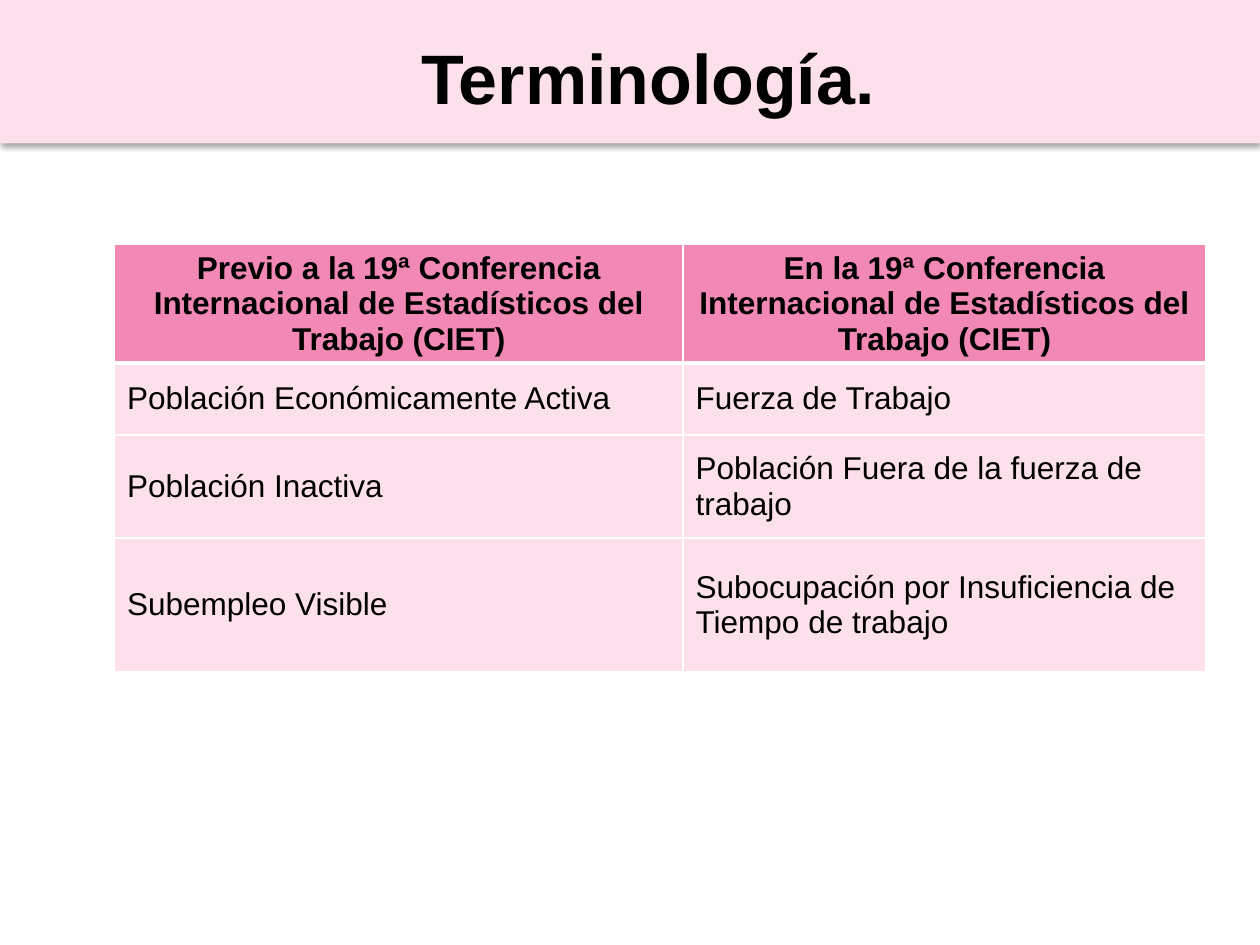
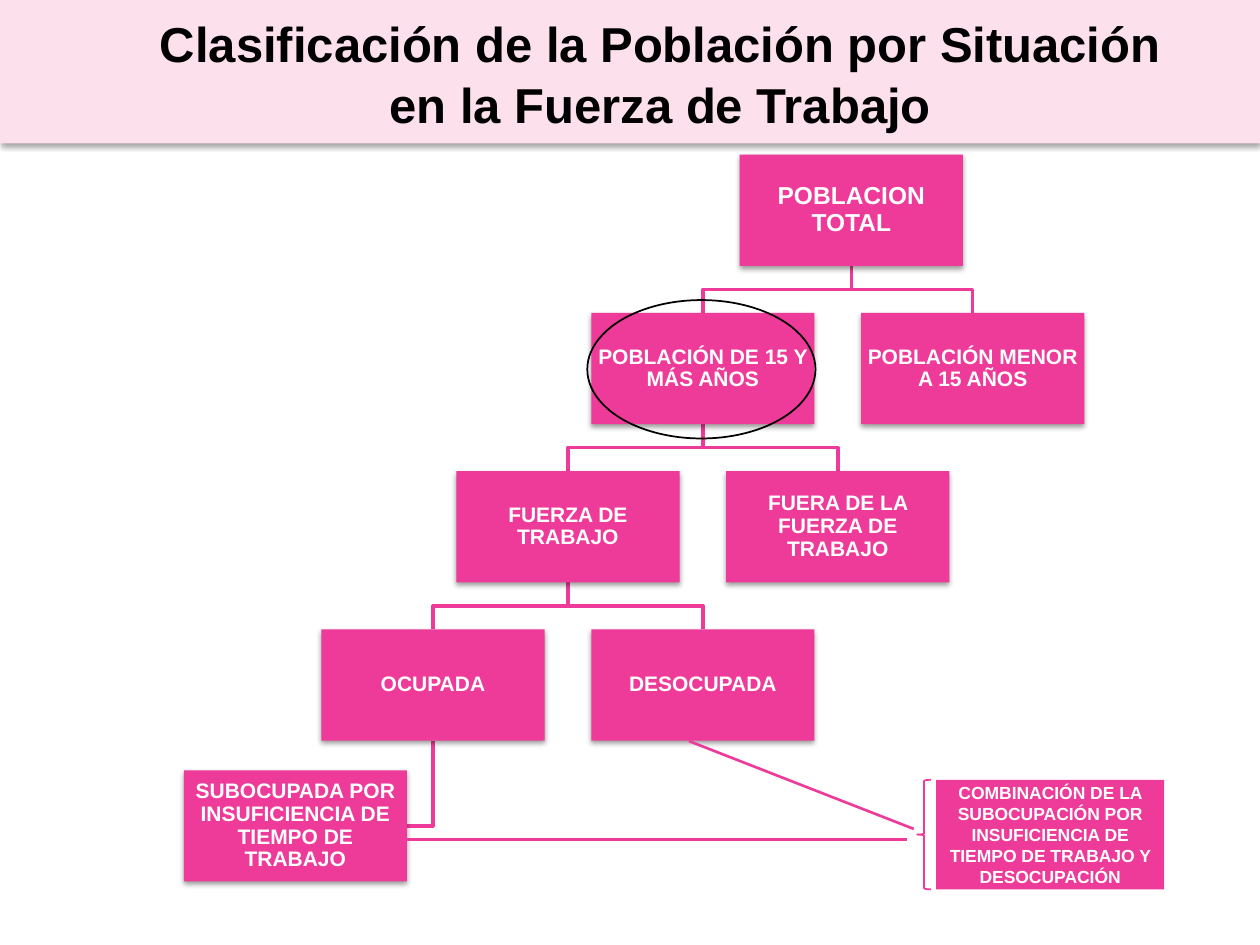
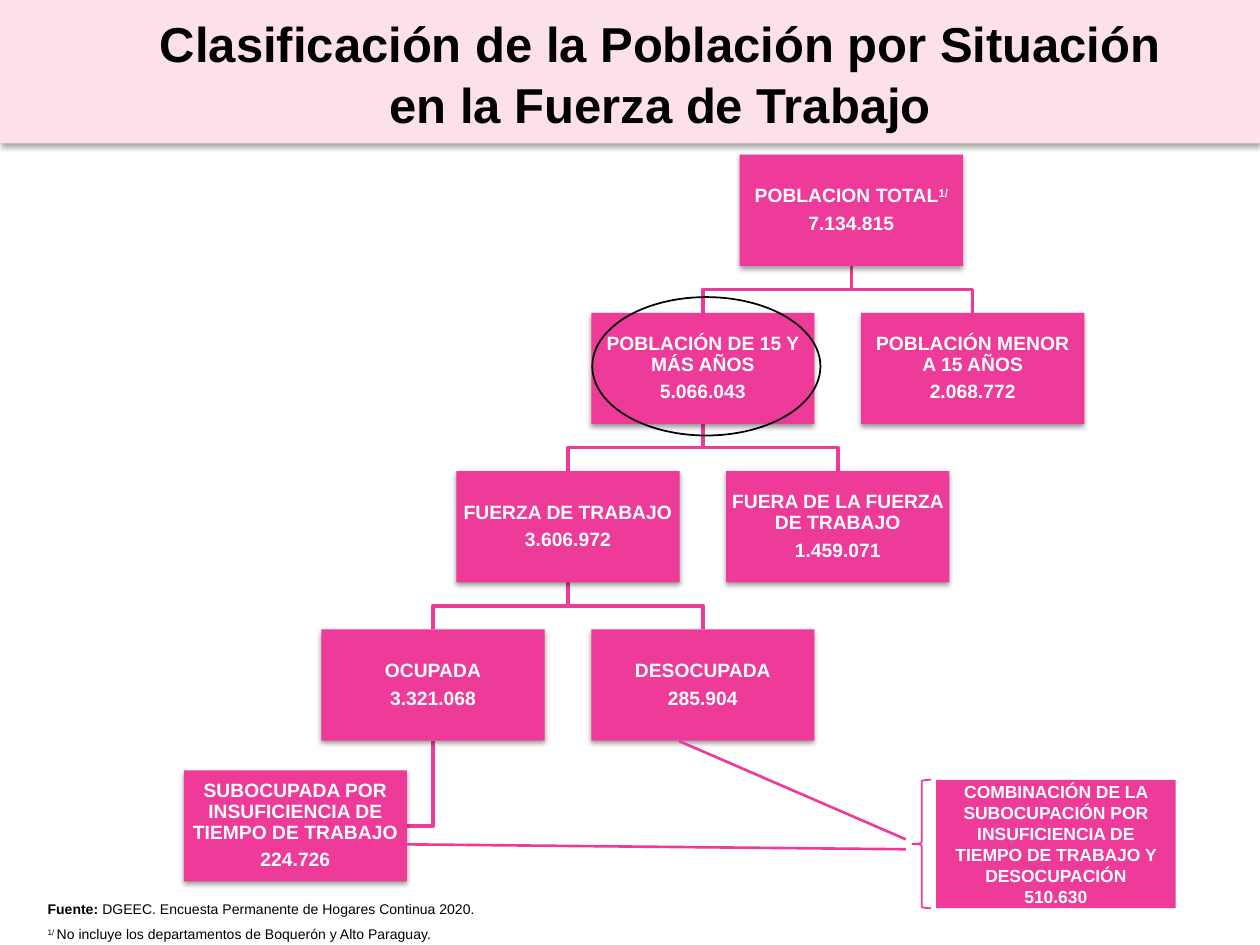
from dataclasses import dataclass

from pptx import Presentation
from pptx.dml.color import RGBColor
from pptx.enum.shapes import MSO_CONNECTOR, MSO_SHAPE
from pptx.enum.text import MSO_ANCHOR, MSO_AUTO_SIZE, PP_ALIGN
from pptx.oxml import parse_xml
from pptx.oxml.ns import nsdecls, qn
from pptx.util import Cm, Pt

RECTANGLE, OVAL, BRACE = MSO_SHAPE.RECTANGLE, MSO_SHAPE.OVAL, MSO_SHAPE.LEFT_BRACE
STRAIGHT = MSO_CONNECTOR.STRAIGHT
CENTER, LEFT = PP_ALIGN.CENTER, PP_ALIGN.LEFT
MIDDLE, TOP = MSO_ANCHOR.MIDDLE, MSO_ANCHOR.TOP
NO_FIT = MSO_AUTO_SIZE.NONE
TITLE_ONLY = 5


@dataclass(frozen=True)
class Theme:
    font: str = "Arial"
    black: RGBColor = RGBColor(0, 0, 0)
    white: RGBColor = RGBColor(255, 255, 255)
    pale: RGBColor = RGBColor(0xFC, 0xE0, 0xEB)
    header: RGBColor = RGBColor(0xF2, 0x88, 0xB4)
    strong: RGBColor = RGBColor(0xEE, 0x3A, 0x98)
    title_size: int = 40
    long_title_size: int = 28
    table_size: int = 18
    root_size: int = 14
    node_size: int = 12
    counted_size: int = 11
    summary_size: int = 10
    note_size: int = 8
    branch_width: float = 2
    joint_width: float = 1.5
    outline_width: float = 1


THEME = Theme()

# Population tree: box size and grid, in centimetres
BOX_WIDTH, BOX_HEIGHT = 4.5, 2.24
TREE_LEFT, TREE_TOP = 6.48, 3.12
COLUMN_STEP, LEVEL_STEP = 2.72, 3.19

# Each node: column, level, label
NODES = {
    "total": (3.1, 0, "POBLACION TOTAL"),
    "adults": (2, 1, "POBLACIÓN DE 15 Y MÁS AÑOS"),
    "minors": (4, 1, "POBLACIÓN MENOR\nA 15 AÑOS"),
    "force": (1, 2, "FUERZA DE TRABAJO"),
    "outside": (3, 2, "FUERA DE LA FUERZA DE TRABAJO"),
    "employed": (0, 3, "OCUPADA"),
    "unemployed": (2, 3, "DESOCUPADA"),
    "underemployed": (-1.02, 3.89, "SUBOCUPADA POR INSUFICIENCIA DE TIEMPO DE TRABAJO"),
}
BRANCHES = {
    "total": ("adults", "minors"),
    "adults": ("force", "outside"),
    "force": ("employed", "unemployed"),
}
FIGURES = {
    "total": "7.134.815",
    "adults": "5.066.043",
    "minors": "2.068.772",
    "force": "3.606.972",
    "outside": "1.459.071",
    "employed": "3.321.068",
    "unemployed": "285.904",
    "underemployed": "224.726",
}
TREE_TITLE = "Clasificación de la Población por Situación en la Fuerza de Trabajo"
SUMMARY = ("COMBINACIÓN DE LA SUBOCUPACIÓN POR INSUFICIENCIA DE TIEMPO "
           "DE TRABAJO Y DESOCUPACIÓN")
TERMS = [
    ("Previo a la 19ª Conferencia Internacional de Estadísticos del Trabajo (CIET)",
     "En la 19ª Conferencia Internacional de Estadísticos del Trabajo (CIET)"),
    ("Población Económicamente Activa", "Fuerza de Trabajo"),
    ("Población Inactiva", "Población Fuera de la fuerza de trabajo"),
    ("Subempleo Visible", "Subocupación por Insuficiencia de Tiempo de trabajo"),
]


def assign(target, values):
    for name, value in values.items():
        setattr(target, name, value)


def node_corner(key):
    column, level, _ = NODES[key]
    return TREE_LEFT + column * COLUMN_STEP, TREE_TOP + level * LEVEL_STEP


class SlidePainter:
    """Holds the theme and the slide being drawn."""

    def __init__(self, deck, theme):
        self.deck, self.theme = deck, theme
        self.layout = deck.slide_layouts[TITLE_ONLY]
        self.page = None

    def new_page(self, title, size, place):
        self.page = self.deck.slides.add_slide(self.layout)
        heading = self.page.shapes.title
        left, top, width, height = map(Cm, place)
        assign(heading, dict(left=left, top=top, width=width, height=height))
        self.set_text(heading.text_frame, [[(title, {})]], size, self.theme.black,
                      True, line_spacing=1.05)

    def set_text(self, frame, paragraphs, size, color, bold, align=CENTER, anchor=MIDDLE,
                 line_spacing=1.0, space_after=0):
        """Each paragraph is a list of (text, options) spans."""
        assign(frame, dict(word_wrap=True, auto_size=NO_FIT, vertical_anchor=anchor))
        for index, spans in enumerate(paragraphs):
            para = frame.add_paragraph() if index else frame.paragraphs[0]
            assign(para, dict(alignment=align, line_spacing=line_spacing,
                              space_before=Pt(0), space_after=Pt(space_after)))
            for text, options in spans:
                for number, line in enumerate(text.split("\n")):
                    if number:
                        para.add_line_break()
                    span = para.add_run()
                    span.text = line
                    self.format_span(span, size, color, options.get("bold", bold))
                    if options.get("raised"):
                        span._r.get_or_add_rPr().set("baseline", "30000")

    def format_span(self, span, size, color, bold):
        assign(span.font, dict(name=self.theme.font, size=Pt(size), bold=bold))
        span.font.color.rgb = color

    def style(self, shape, fill=None, line=None, width=1):
        shape.shadow.inherit = False
        if fill is None:
            shape.fill.background()
        else:
            shape.fill.solid()
            shape.fill.fore_color.rgb = fill
        if line is None:
            shape.line.fill.background()
        else:
            shape.line.color.rgb = line
            shape.line.width = Pt(width)

    def shape(self, kind, place, **look):
        shape = self.page.shapes.add_shape(kind, *map(Cm, place))
        self.style(shape, **look)
        return shape

    def cast_shadow(self, shape):
        shape._element.spPr.find(qn("a:effectLst")).append(parse_xml(
            f'<a:outerShdw {nsdecls("a")} blurRad="40000" dist="20000" dir="5400000" '
            'rotWithShape="0"><a:srgbClr val="000000"><a:alpha val="38000"/>'
            '</a:srgbClr></a:outerShdw>'))

    def layout_band(self):
        """Puts the title band on the layout, behind its placeholders."""
        band = self.shape(RECTANGLE, (0, 0, 25.4, 2.89), fill=self.theme.pale)
        self.cast_shadow(band)
        self.layout.shapes._spTree.insert(2, band._element)

    def polyline(self, points):
        corners = [(Cm(x), Cm(y)) for x, y in points]
        builder = self.page.shapes.build_freeform(*corners[0], scale=1.0)
        builder.add_line_segments(corners[1:], close=False)
        self.style(builder.convert_to_shape(), line=self.theme.strong,
                   width=self.theme.branch_width)

    def joint(self, ends):
        line = self.page.shapes.add_connector(STRAIGHT, *map(Cm, ends))
        line.line.color.rgb = self.theme.strong
        line.line.width = Pt(self.theme.joint_width)
        line._element.spPr.append(parse_xml(f'<a:effectLst {nsdecls("a")}/>'))

    def node(self, key, paragraphs, size):
        box = self.shape(RECTANGLE, (*node_corner(key), BOX_WIDTH, BOX_HEIGHT),
                         fill=self.theme.strong)
        self.cast_shadow(box)
        sides = ("left", "top", "right", "bottom")
        assign(box.text_frame, {f"margin_{side}": Cm(0.03) for side in sides})
        self.set_text(box.text_frame, paragraphs, size, self.theme.white, True,
                      line_spacing=0.9, space_after=0.35 * size)

    def text(self, place, paragraphs, size, **layout):
        box = self.page.shapes.add_textbox(*map(Cm, place))
        self.set_text(box.text_frame, paragraphs, size, self.theme.black, False, **layout)

    def cell_borders(self, cell, widths):
        properties = cell._tc.get_or_add_tcPr()
        for index, (side, width) in enumerate(widths.items()):
            properties.insert(index, parse_xml(
                f'<a:ln{side} {nsdecls("a")} w="{int(Pt(width))}"><a:solidFill>'
                f'<a:srgbClr val="{self.theme.white}"/></a:solidFill></a:ln{side}>'))

    def table(self, place, rows, widths, heights):
        table = self.page.shapes.add_table(len(rows), len(widths), *map(Cm, place)).table
        for column, width in zip(table.columns, widths):
            column.width = Cm(width)
        for row, height in zip(table.rows, heights):
            row.height = Cm(height)
        for r, texts in enumerate(rows):
            is_header = r == 0
            for c, text in enumerate(texts):
                cell = table.cell(r, c)
                cell.vertical_anchor = MIDDLE
                cell.fill.solid()
                cell.fill.fore_color.rgb = self.theme.header if is_header else self.theme.pale
                self.cell_borders(cell, dict(L=1, R=1, T=3 if r == 1 else 1,
                                             B=3 if is_header else 1))
                para = cell.text_frame.paragraphs[0]
                para.alignment = CENTER if is_header else LEFT
                span = para.add_run()
                span.text = text
                self.format_span(span, self.theme.table_size, self.theme.black, is_header)

    def branches(self):
        for parent, children in BRANCHES.items():
            left, top = node_corner(parent)
            middle, bottom = left + BOX_WIDTH / 2, top + BOX_HEIGHT
            for child in children:
                child_left, child_top = node_corner(child)
                child_middle, turn = child_left + BOX_WIDTH / 2, (bottom + child_top) / 2
                self.polyline([(middle, bottom), (middle, turn),
                               (child_middle, turn), (child_middle, child_top)])
        # The underemployed box hangs from the side
        left, top = node_corner("employed")
        side_left, side_top = node_corner("underemployed")
        middle, side_middle = left + BOX_WIDTH / 2, side_top + BOX_HEIGHT / 2
        self.polyline([(middle, top + BOX_HEIGHT), (middle, side_middle),
                       (side_left + BOX_WIDTH, side_middle)])

    def population_tree(self, labels, sizes, ring, summary, summary_place, joints, brace):
        self.new_page(TREE_TITLE, self.theme.long_title_size, (2.31, 0.13, 22, 2.64))
        self.branches()
        for key, paragraphs in labels.items():
            self.node(key, paragraphs, sizes.get(key, sizes["other"]))
        self.shape(OVAL, ring, line=self.theme.black, width=self.theme.outline_width)
        box = self.shape(RECTANGLE, summary_place, fill=self.theme.strong)
        self.set_text(box.text_frame, summary, self.theme.summary_size,
                      self.theme.white, True)
        for ends in joints:
            self.joint(ends)
        self.shape(BRACE, brace, line=self.theme.strong, width=self.theme.outline_width)


def main():
    deck = Presentation()
    deck.slide_width, deck.slide_height = Cm(25.4), Cm(19.05)
    painter = SlidePainter(deck, THEME)

    # Terminology table
    painter.new_page("Terminología.", THEME.title_size, (2.31, 0.53, 21.51, 1.96))
    painter.layout_band()
    painter.table((2.31, 4.93, 22, 8.76), TERMS, (11.46, 10.54), (2.18, 1.45, 2.08, 2.69))

    # Classification without figures
    labels = {key: [[(label, {})]] for key, (_, _, label) in NODES.items()}
    painter.population_tree(
        labels, {"total": THEME.root_size, "other": THEME.node_size},
        ring=(11.84, 6.05, 4.6, 2.79),
        summary=[[(SUMMARY, {})]], summary_place=(18.87, 15.72, 4.6, 2.21),
        joints=[(8.1, 16.92, 18.29, 16.92), (13.89, 14.94, 18.42, 16.71)],
        brace=(18.49, 15.72, 0.28, 2.21))

    # Classification with figures and source note
    counted = {key: [*label, [(FIGURES[key], {})]] for key, label in labels.items()}
    counted["total"][0] = [*counted["total"][0], ("1/", {"raised": True})]
    painter.population_tree(
        counted, {"other": THEME.counted_size},
        ring=(11.94, 5.99, 4.6, 2.79),
        summary=[[(SUMMARY, {})], [("510.630", {})]],
        summary_place=(18.87, 15.72, 4.83, 2.59),
        joints=[(8.1, 17.02, 18.26, 17.12), (13.69, 14.94, 18.26, 16.92)],
        brace=(18.39, 15.72, 0.38, 2.59))
    painter.text((0.71, 17.86, 15.11, 1.19), [
        [("Fuente: ", {"bold": True}),
         ("DGEEC. Encuesta Permanente de Hogares Continua 2020.", {})],
        [("1/ ", {"raised": True}),
         ("No incluye los departamentos de Boquerón y Alto Paraguay.", {})],
    ], THEME.note_size, align=LEFT, anchor=TOP, line_spacing=1.5)

    deck.save("out.pptx")


if __name__ == "__main__":
    main()
